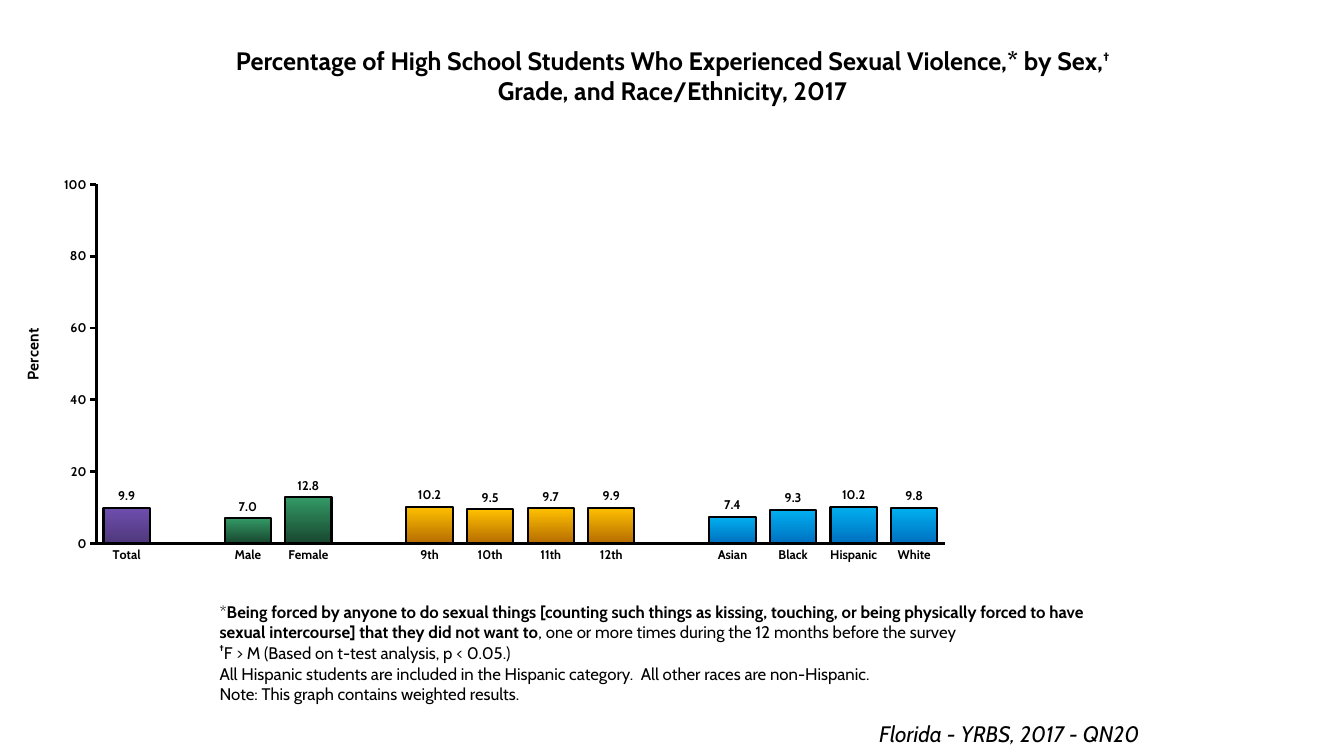
from dataclasses import dataclass

from pptx import Presentation
from pptx.chart.data import CategoryChartData
from pptx.dml.color import RGBColor
from pptx.enum.chart import XL_CHART_TYPE, XL_LABEL_POSITION, XL_TICK_MARK
from pptx.enum.text import MSO_ANCHOR, MSO_AUTO_SIZE, PP_ALIGN
from pptx.oxml import parse_xml
from pptx.oxml.ns import nsdecls, qn
from pptx.util import Inches, Pt


@dataclass(frozen=True)
class Theme:
    font: str = "Cabin"
    ink: str = "000000"
    total: tuple = ("6E4EAE", "4F387C")
    sex: tuple = ("339966", "18472F")
    grade: tuple = ("FFC000", "B66D00")
    race: tuple = ("00B0F0", "0070C0")
    title: int = 18
    title_mark: int = 17
    source: int = 16
    note: int = 12
    axis_title: int = 11
    label: int = 9


THEME = Theme()

GROUPS = [
    (THEME.total, [("Total", 9.9)]),
    (THEME.sex, [("Male", 7.0), ("Female", 12.8)]),
    (THEME.grade, [("9th", 10.2), ("10th", 9.5), ("11th", 9.7), ("12th", 9.9)]),
    (THEME.race, [("Asian", 7.4), ("Black", 9.3), ("Hispanic", 10.2), ("White", 9.8)]),
]

TITLE = [[
    ("Percentage of High School Students Who Experienced Sexual Violence,* by Sex,", {}),
    ("†", {"size": THEME.title_mark, "baseline": 40}),
    (" Grade, and Race/Ethnicity, 2017", {}),
]]

NOTES = [
    [
        ("*", {}),
        ("Being forced by anyone to do sexual things [counting such things as kissing, "
         "touching, or being physically forced to have sexual intercourse] that they "
         "did not want to", {"bold": True}),
        (", one or more times during the 12 months before the survey", {}),
    ],
    [
        ("†", {"bold": True, "baseline": 50}),
        ("F > M (Based on t-test analysis, p < 0.05.)", {}),
    ],
    [("All Hispanic students are included in the Hispanic category.  "
      "All other races are non-Hispanic.", {})],
    [("Note: This graph contains weighted results.", {})],
]

SOURCE = [[("Florida - YRBS, 2017 - QN20", {})]]


def style_font(font, size, bold=False, italic=False):
    font.name = THEME.font
    font.size = Pt(size)
    font.bold = bold
    font.italic = italic
    font.color.rgb = RGBColor.from_string(THEME.ink)


def add_run(p, text, size, bold=False, italic=False, baseline=0):
    """Add a run; baseline is a superscript lift in percent."""
    r = p.add_run()
    r.text = text
    style_font(r.font, size, bold, italic)
    if baseline:
        r.font._element.set("baseline", str(baseline * 1000))


def write_text(sp, paragraphs, align=PP_ALIGN.LEFT, anchor=MSO_ANCHOR.TOP, **base):
    """Fill a shape with paragraphs of (text, overrides) runs."""
    tf = sp.text_frame
    tf.word_wrap = True
    tf.auto_size = MSO_AUTO_SIZE.NONE
    tf.vertical_anchor = anchor
    for i, runs in enumerate(paragraphs):
        p = tf.add_paragraph() if i else tf.paragraphs[0]
        p.alignment = align
        for text, overrides in runs:
            add_run(p, text, **{**base, **overrides})


def add_title(s, left, top, width, height):
    sp = s.shapes.title
    sp.left, sp.top = Inches(left), Inches(top)
    sp.width, sp.height = Inches(width), Inches(height)
    write_text(sp, TITLE, align=PP_ALIGN.CENTER, size=THEME.title, bold=True)


def add_text(s, left, top, width, height, paragraphs, **fmt):
    sp = s.shapes.add_textbox(Inches(left), Inches(top), Inches(width), Inches(height))
    write_text(sp, paragraphs, **fmt)


def set_layout(parent, index, **fractions):
    """Place a chart part by fractions of the chart area."""
    old = parent.find(qn("c:layout"))
    if old is not None:
        parent.remove(old)
    target = '<c:layoutTarget val="inner"/>' if "w" in fractions else ""
    modes = "".join(f'<c:{k}Mode val="edge"/>' for k in "xy")
    values = "".join(f'<c:{k} val="{v}"/>' for k, v in fractions.items())
    parent.insert(index, parse_xml(
        f'<c:layout {nsdecls("c")}><c:manualLayout>{target}{modes}{values}'
        "</c:manualLayout></c:layout>"))


def style_line(line, width):
    line.color.rgb = RGBColor.from_string(THEME.ink)
    line.width = Pt(width)


def style_axis(axis, tick):
    axis.has_major_gridlines = False
    axis.major_tick_mark = tick
    axis.minor_tick_mark = XL_TICK_MARK.NONE
    style_line(axis.format.line, 2)
    style_font(axis.tick_labels.font, THEME.label, bold=True)


def style_bar(point, colors):
    fill = point.format.fill
    fill.gradient()
    fill.gradient_angle = 270
    for position, (stop, color) in enumerate(zip(fill.gradient_stops, colors)):
        stop.position = position
        stop.color.rgb = RGBColor.from_string(color)
    style_line(point.format.line, 1.5)


def chart_bars():
    """List (category, value, colours), with an empty slot between groups."""
    bars = []
    for colors, members in GROUPS:
        if bars:
            bars.append(("", None, None))
        bars += [(name, value, colors) for name, value in members]
    return bars


def add_percent_chart(s, left, top, width, height):
    bars = chart_bars()
    data = CategoryChartData()
    data.categories = [name for name, _, _ in bars]
    data.add_series("Series 1", [value for _, value, _ in bars])
    chart = s.shapes.add_chart(
        XL_CHART_TYPE.COLUMN_CLUSTERED,
        Inches(left), Inches(top), Inches(width), Inches(height), data).chart
    chart.has_legend = False
    chart.has_title = False
    style_font(chart.font, THEME.title)
    set_layout(chart._chartSpace.chart.plotArea, 0, x=0.1, y=0.04, w=0.88, h=0.89)

    style_axis(chart.category_axis, XL_TICK_MARK.NONE)
    axis = chart.value_axis
    style_axis(axis, XL_TICK_MARK.OUTSIDE)
    axis.minimum_scale, axis.maximum_scale, axis.major_unit = 0, 100, 20
    axis.tick_labels.number_format = "General"
    axis.tick_labels.number_format_is_linked = False
    title = axis.axis_title
    add_run(title.text_frame.paragraphs[0], "Percent", THEME.axis_title, bold=True)
    set_layout(title._element, 1, x=0.02, y=0.39)

    plot = chart.plots[0]
    plot.gap_width, plot.overlap = 31, 100
    plot.vary_by_categories = False
    plot.has_data_labels = True
    labels = plot.data_labels
    labels.show_value = True
    labels.position = XL_LABEL_POSITION.OUTSIDE_END
    labels.number_format = "#,##0.0"
    labels.number_format_is_linked = False
    style_font(labels.font, THEME.label, bold=True)
    for i, (_, _, colors) in enumerate(bars):
        if colors:
            style_bar(plot.series[0].points[i], colors)


def main():
    prs = Presentation()
    prs.slide_width, prs.slide_height = Inches(13.33), Inches(7.5)
    s = prs.slides.add_slide(prs.slide_layouts[5])
    add_title(s, 2.17, 0.4, 9, 0.71)
    add_text(s, 2.08, 5.92, 9.17, 1.11, NOTES, anchor=MSO_ANCHOR.BOTTOM, size=THEME.note)
    add_text(s, 2, 7.1, 9.4, 0.37, SOURCE, align=PP_ALIGN.RIGHT,
             size=THEME.source, italic=True)
    add_percent_chart(s, 0, 1.67, 9.56, 4)
    prs.save("out.pptx")


if __name__ == "__main__":
    main()
